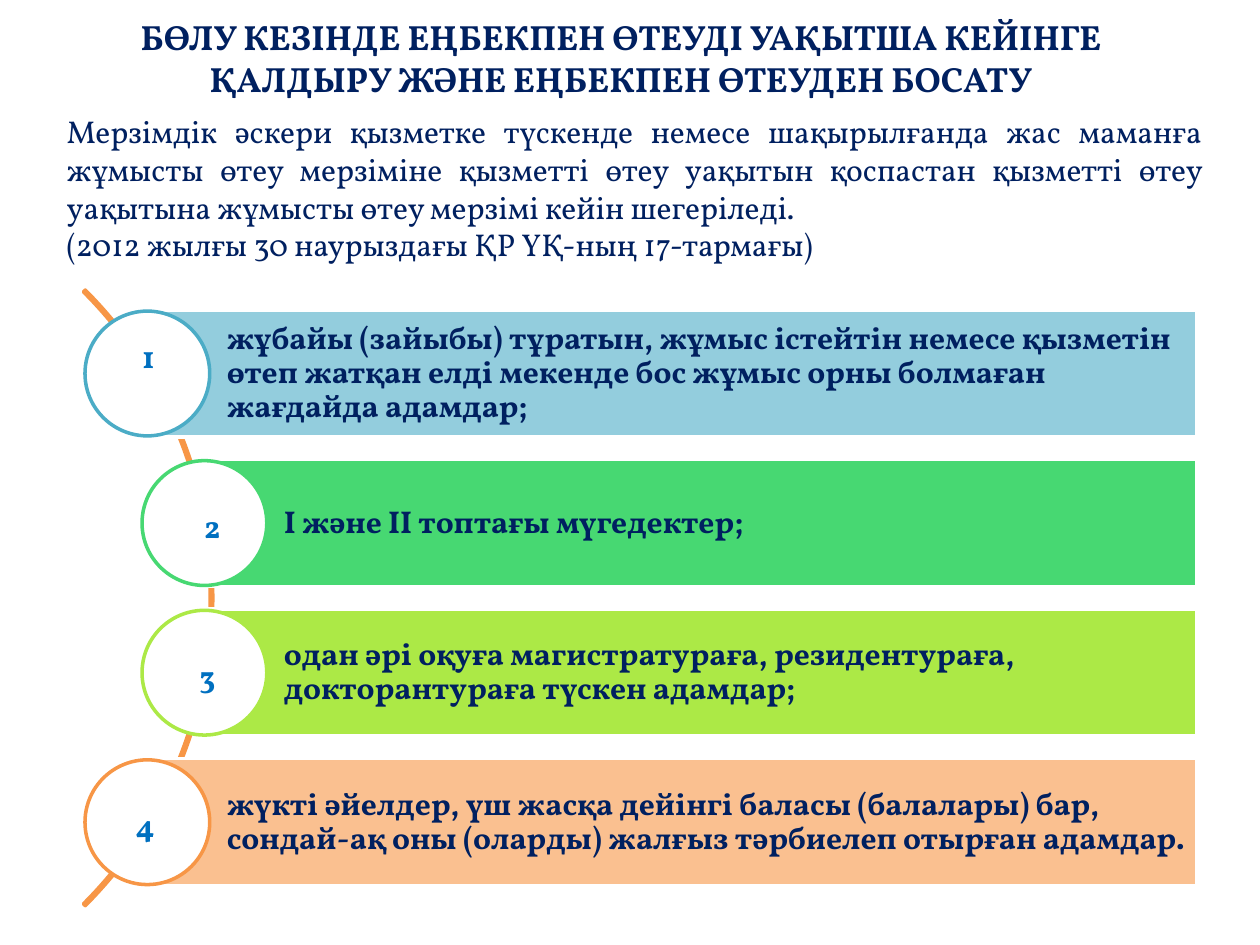
from dataclasses import dataclass

from pptx import Presentation
from pptx.dml.color import RGBColor
from pptx.enum.shapes import MSO_SHAPE
from pptx.enum.text import MSO_ANCHOR, MSO_AUTO_SIZE, PP_ALIGN
from pptx.util import Pt

RECTANGLE, OVAL, BLOCK_ARC = MSO_SHAPE.RECTANGLE, MSO_SHAPE.OVAL, MSO_SHAPE.BLOCK_ARC
LEFT, CENTER, JUSTIFY = PP_ALIGN.LEFT, PP_ALIGN.CENTER, PP_ALIGN.JUSTIFY
TOP, MIDDLE = MSO_ANCHOR.TOP, MSO_ANCHOR.MIDDLE
NO_AUTOFIT = MSO_AUTO_SIZE.NONE
TITLE_ONLY = 5


@dataclass(frozen=True)
class Theme:
    font: str = "Vollkorn"
    title_size: float = 20
    body_size: float = 18
    line_width: float = 2
    navy: str = "002060"
    number: str = "0070C0"
    white: str = "FFFFFF"
    orange: str = "F79646"
    peach: str = "FAC090"
    teal: str = "4BACC6"
    sky: str = "93CDDD"
    green: str = "47D872"
    lime: str = "ACE946"


THEME = Theme()

TITLE = "БӨЛУ КЕЗІНДЕ ЕҢБЕКПЕН ӨТЕУДІ УАҚЫТША КЕЙІНГЕ ҚАЛДЫРУ ЖӘНЕ ЕҢБЕКПЕН ӨТЕУДЕН БОСАТУ"
INTRO = (
    "Мерзімдік әскери қызметке түскенде немесе шақырылғанда жас маманға жұмысты "
    "өтеу мерзіміне қызметті өтеу уақытын қоспастан қызметті өтеу уақытына жұмысты "
    "өтеу мерзімі кейін шегеріледі.",
    "(2012 жылғы 30 наурыздағы ҚР ҮҚ-ның 17-тармағы)",
)
# fields: text, bar colour, ring colour, bar indent, number offset from the bar corner
GROUNDS = (
    ("жұбайы (зайыбы) тұратын, жұмыс істейтін немесе қызметін өтеп жатқан елді "
     "мекенде бос жұмыс орны болмаған жағдайда адамдар;",
     THEME.sky, THEME.teal, 0, (-10, 12)),
    ("І және II топтағы мүгедектер;",
     THEME.green, THEME.green, 32.6, (-7.2, 23.8)),
    ("одан әрі оқуға магистратураға, резидентураға, докторантураға түскен адамдар;",
     THEME.lime, THEME.lime, 32.6, (-10, 23.8)),
    ("жүкті әйелдер, үш жасқа дейінгі баласы (балалары) бар, сондай-ақ оны "
     "(оларды) жалғыз тәрбиелеп отырған адамдар.",
     THEME.peach, THEME.orange, 0, (-13.7, 23.8)),
)


def write(shape, *paragraphs, size=THEME.body_size, color=THEME.navy, bold=True,
          align=LEFT, anchor=TOP, wrap=True, spacing=None, insets=(7.2, 3.6, 7.2, 3.6)):
    frame = shape.text_frame
    frame.auto_size = NO_AUTOFIT
    frame.word_wrap = wrap
    frame.vertical_anchor = anchor
    (frame.margin_left, frame.margin_top,
     frame.margin_right, frame.margin_bottom) = map(Pt, insets)
    for index, text in enumerate(paragraphs):
        paragraph = frame.add_paragraph() if index else frame.paragraphs[0]
        paragraph.alignment = align
        paragraph.line_spacing = spacing
        run = paragraph.add_run()
        run.text = text
        run.font.name = THEME.font
        run.font.size = Pt(size)
        run.font.bold = bold
        run.font.color.rgb = RGBColor.from_string(color)


def add_figure(slide, kind, box, line, fill=None):
    figure = slide.shapes.add_shape(kind, *map(Pt, box))
    figure.shadow.inherit = False
    if fill:
        figure.fill.solid()
        figure.fill.fore_color.rgb = RGBColor.from_string(fill)
    else:
        figure.fill.background()
    figure.line.color.rgb = RGBColor.from_string(line)
    figure.line.width = Pt(THEME.line_width)
    return figure


def place_title(slide, box):
    title = slide.shapes.title
    title.left, title.top, title.width, title.height = map(Pt, box)
    write(title, TITLE, size=THEME.title_size, align=CENTER, anchor=MIDDLE)


def place_intro(slide, box):
    intro = slide.shapes.add_textbox(*map(Pt, box))
    write(intro, *INTRO, bold=False, align=JUSTIFY)


def place_arc(slide, box):
    arc = add_figure(slide, BLOCK_ARC, box, THEME.orange)
    for index, value in enumerate((189, 27, 0.003)):
        arc.adjustments[index] = value


def place_ground(slide, box, number, text, fill, ring, number_offset):
    left, top, width, height = box
    bar = add_figure(slide, RECTANGLE, box, THEME.white, fill)
    write(bar, text, anchor=MIDDLE, spacing=0.9, insets=(45.4, 3.6, 3.6, 3.6))
    diameter = 71.3
    add_figure(slide, OVAL, (left - diameter / 2, top + (height - diameter) / 2,
                             diameter, diameter), ring, THEME.white)
    dx, dy = number_offset
    label = slide.shapes.add_textbox(Pt(left + dx), Pt(top + dy), Pt(23.8), Pt(29))
    write(label, str(number), color=THEME.number, wrap=False)


def place_grounds(slide, box):
    left, top, width, height = box
    bar_height = 72.7
    pitch = (height - bar_height) / (len(GROUNDS) - 1)
    place_arc(slide, (left - 460.1, top - 84.2, 497.5, 497.5))
    for index, (text, fill, ring, indent, number_offset) in enumerate(GROUNDS):
        bar_box = (left + indent, top + index * pitch, width - indent, bar_height)
        place_ground(slide, bar_box, index + 1, text, fill, ring, number_offset)


def main():
    deck = Presentation()
    deck.slide_width, deck.slide_height = Pt(720), Pt(540)
    slide = deck.slides.add_slide(deck.slide_layouts[TITLE_ONLY])
    place_title(slide, (31, 5, 648, 55.4))
    place_grounds(slide, (84.2, 177.1, 599.6, 329.1))
    place_intro(slide, (31, 60.5, 663, 94.3))
    deck.save("out.pptx")


if __name__ == "__main__":
    main()
